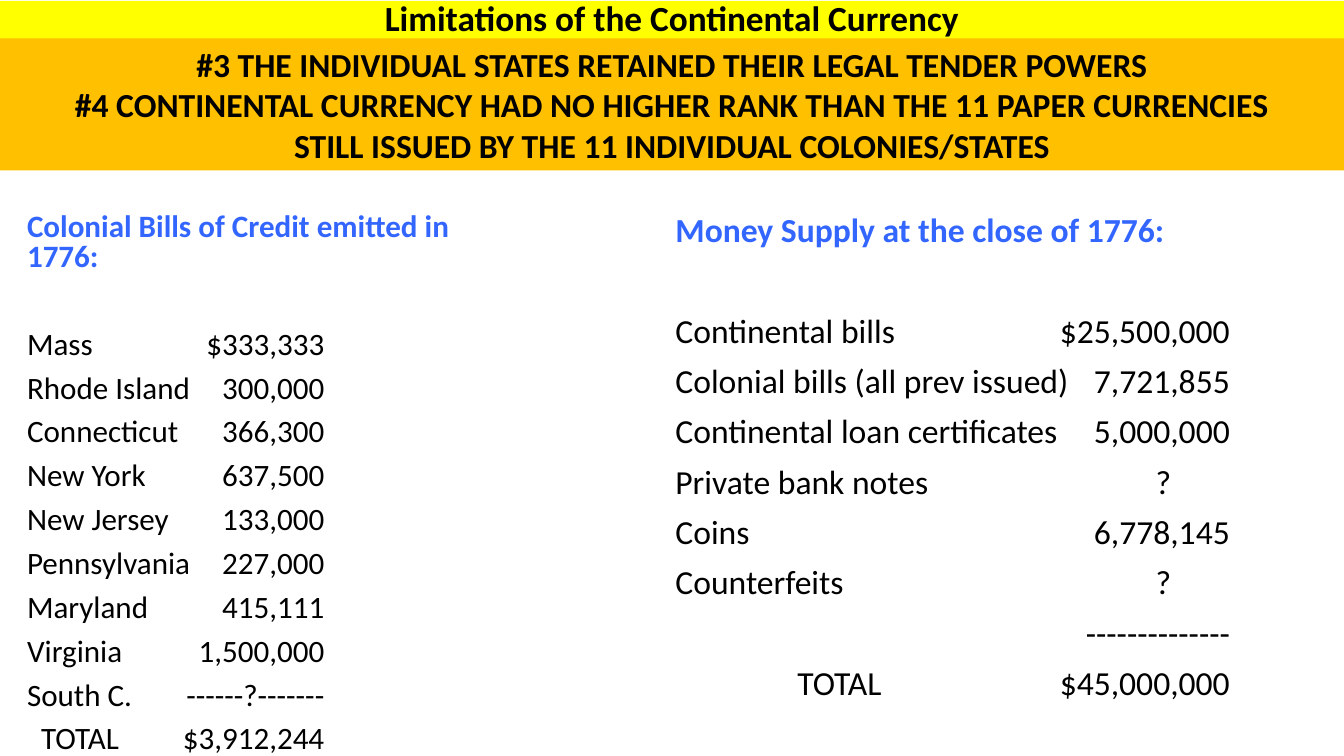
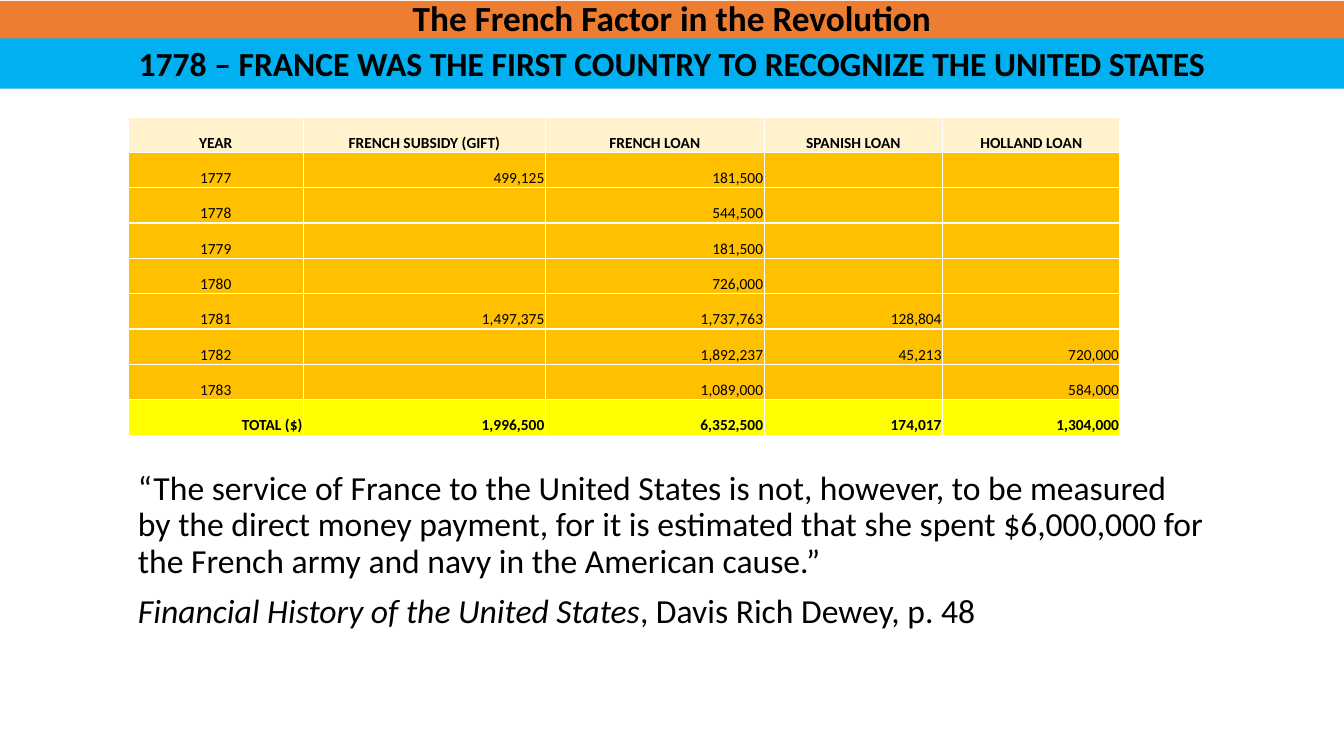
from lxml import etree
from pptx import Presentation
from pptx.dml.color import RGBColor
from pptx.enum.shapes import MSO_SHAPE
from pptx.enum.text import MSO_ANCHOR, MSO_AUTO_SIZE, PP_ALIGN
from pptx.oxml.ns import qn
from pptx.util import Inches, Pt

LEFT, CENTER, RIGHT = PP_ALIGN.LEFT, PP_ALIGN.CENTER, PP_ALIGN.RIGHT
MIDDLE, BOTTOM = MSO_ANCHOR.MIDDLE, MSO_ANCHOR.BOTTOM
RECTANGLE, NO_FIT = MSO_SHAPE.RECTANGLE, MSO_AUTO_SIZE.NONE
BLACK = RGBColor(0x00, 0x00, 0x00)
BLUE = RGBColor(0x33, 0x66, 0xFF)
YELLOW = RGBColor(0xFF, 0xFF, 0x00)
GOLD = RGBColor(0xFF, 0xC0, 0x00)
CREAM = RGBColor(0xFF, 0xF2, 0xCC)
ORANGE = RGBColor(0xED, 0x7D, 0x31)
SKY = RGBColor(0x00, 0xB0, 0xF0)
FONT = "Calibri"
WIDTH = Inches(13.33)


def write(frame, text, size=24, color=BLACK, bold=False, align=LEFT, line=1.0,
          before=0, after=0, tabs=(), italic_lead=""):
    """Add a paragraph, filling the empty first one before adding more."""
    first = frame.paragraphs[0]
    is_first = not first.runs
    para = first if is_first else frame.add_paragraph()
    para.alignment, para.line_spacing = align, line
    para.space_before, para.space_after = Pt(0 if is_first else before), Pt(after)
    if tabs:
        stops = etree.SubElement(para._p.get_or_add_pPr(), qn("a:tabLst"))
        for position, kind in tabs:
            etree.SubElement(stops, qn("a:tab"), pos=str(Inches(position)), algn=kind)
    for words, italic in ((italic_lead, True), (text, False)):
        if words:
            span = para.add_run()
            span.text = words
            span.font.name, span.font.size = FONT, Pt(size)
            span.font.bold, span.font.italic = bold, italic
            span.font.color.rgb = color


def start_slide(title, title_fill, band_lines, band_fill, band_height):
    """Add a slide with its title strip and the headline band below it."""
    slide = deck.slides.add_slide(deck.slide_layouts[5])
    heading = slide.shapes.title
    heading.left, heading.top = Inches(0), Inches(0.01)
    heading.width, heading.height = WIDTH, Inches(0.38)
    heading.fill.solid()
    heading.fill.fore_color.rgb = title_fill
    heading.text_frame.auto_size = NO_FIT
    heading.text_frame.vertical_anchor = MIDDLE
    write(heading.text_frame, title, size=25.2, bold=True, align=CENTER, line=0.9)

    band = slide.shapes.add_shape(RECTANGLE, Inches(0), Inches(0.38), WIDTH, Inches(band_height))
    band.shadow.inherit = False
    band.fill.solid()
    band.fill.fore_color.rgb = band_fill
    band.line.fill.background()
    band.text_frame.word_wrap = True
    for text in band_lines:
        write(band.text_frame, text, bold=True, align=CENTER)
    return slide


deck = Presentation()
deck.slide_width, deck.slide_height = WIDTH, Inches(7.5)

# Slide 1: two lists of amounts
slide = start_slide(
    "Limitations of the Continental Currency", YELLOW,
    ["#3 THE INDIVIDUAL STATES RETAINED THEIR LEGAL TENDER POWERS",
     "#4 CONTINENTAL CURRENCY HAD NO HIGHER RANK THAN THE 11 PAPER CURRENCIES",
     "STILL ISSUED BY THE 11 INDIVIDUAL COLONIES/STATES"],
    GOLD, 1.31)

colonial_bills = [
    ("Mass", "$333,333"), ("Rhode Island", "300,000"), ("Connecticut", "366,300"),
    ("New York", "637,500"), ("New Jersey", "133,000"), ("Pennsylvania", "227,000"),
    ("Maryland", "415,111"), ("Virginia", "1,500,000"), ("South C.", "------?-------"),
    ("TOTAL", "$3,912,244"),
]
money_supply = [
    ("Continental bills", "$25,500,000"), ("Colonial bills (all prev issued)", "7,721,855"),
    ("Continental loan certificates", "5,000,000"), ("Private bank notes", "?"),
    ("Coins", "6,778,145"), ("Counterfeits", "?"), ("", "--------------"),
    ("TOTAL", "$45,000,000"),
]
# heading, rows, left, width, size, line spacing, gap, total indent, mark centre, amount edge
lists = [
    ("Colonial Bills of Credit emitted in 1776:", colonial_bills,
     0.17, 5.1, 22.2, 0.8, 31.5, 0.14, 2.2, 2.95),
    ("Money Supply at the close of 1776:", money_supply,
     6.6, 6.11, 24, 0.9, 36, 1.21, 4.84, 5.5),
]
for heading, rows, left, width, size, line, gap, indent, mark, edge in lists:
    box = slide.shapes.add_textbox(Inches(left), Inches(2.07), Inches(width), Inches(5.43))
    frame = box.text_frame
    frame.word_wrap = True
    write(frame, heading, size=size, color=BLUE, bold=True, line=line, after=gap)
    for label, amount in rows:
        tabs = [(mark, "ctr")] if amount == "?" else [(edge, "r")]
        if label == "TOTAL":
            label = "\tTOTAL"
            tabs.insert(0, (indent, "l"))
        write(frame, f"{label}\t{amount}", size=size, line=line, before=10, tabs=tabs)

# Slide 2: loans table and quotation
slide = start_slide(
    "The French Factor in the Revolution", ORANGE,
    ["1778 – FRANCE WAS THE FIRST COUNTRY TO RECOGNIZE THE UNITED STATES"], SKY, 0.5)

loans = [
    ["YEAR", "FRENCH SUBSIDY (GIFT)", "FRENCH LOAN", "SPANISH LOAN", "HOLLAND LOAN"],
    ["1777", "499,125", "181,500", "", ""],
    ["1778", "", "544,500", "", ""],
    ["1779", "", "181,500", "", ""],
    ["1780", "", "726,000", "", ""],
    ["1781", "1,497,375", "1,737,763", "128,804", ""],
    ["1782", "", "1,892,237", "45,213", "720,000"],
    ["1783", "", "1,089,000", "", "584,000"],
    ["TOTAL ($)", "1,996,500", "6,352,500", "174,017", "1,304,000"],
]
column_widths = [1.74, 2.4, 2.17, 1.77, 1.76]
table = slide.shapes.add_table(len(loans), len(column_widths), Inches(1.27), Inches(1.16),
                               Inches(sum(column_widths)), Inches(3.16)).table
table.first_row = table.horz_banding = False
for column, width in zip(table.columns, column_widths):
    column.width = Inches(width)

last = len(loans) - 1
for r, values in enumerate(loans):
    for c, value in enumerate(values):
        cell = table.cell(r, c)
        cell.margin_left = cell.margin_right = cell.margin_top = Inches(0.01)
        cell.margin_bottom = Inches(0)
        cell.vertical_anchor = BOTTOM
        for side in ("lnL", "lnR", "lnT", "lnB"):
            border = etree.SubElement(cell._tc.get_or_add_tcPr(), qn(f"a:{side}"), w=str(Pt(1)))
            paint = etree.SubElement(border, qn("a:solidFill"))
            etree.SubElement(paint, qn("a:srgbClr"), val="FFFFFF")
        cell.fill.solid()
        cell.fill.fore_color.rgb = {0: CREAM, last: YELLOW}.get(r, GOLD)
        centered = r == 0 or (c == 0 and r < last)
        write(cell.text_frame, value, size=11, bold=r in (0, last),
              align=CENTER if centered else RIGHT)

quote = slide.shapes.add_textbox(Inches(1.27), Inches(4.63), Inches(10.79), Inches(1.74))
quote.text_frame.word_wrap = True
write(quote.text_frame,
      "“The service of France to the United States is not, however, to be measured by the "
      "direct money payment, for it is estimated that she spent $6,000,000 for the French "
      "army and navy in the American cause.”", line=0.9)
write(quote.text_frame, ", Davis Rich Dewey, p. 48", line=0.9, before=10,
      italic_lead="Financial History of the United States")

deck.save("out.pptx")
